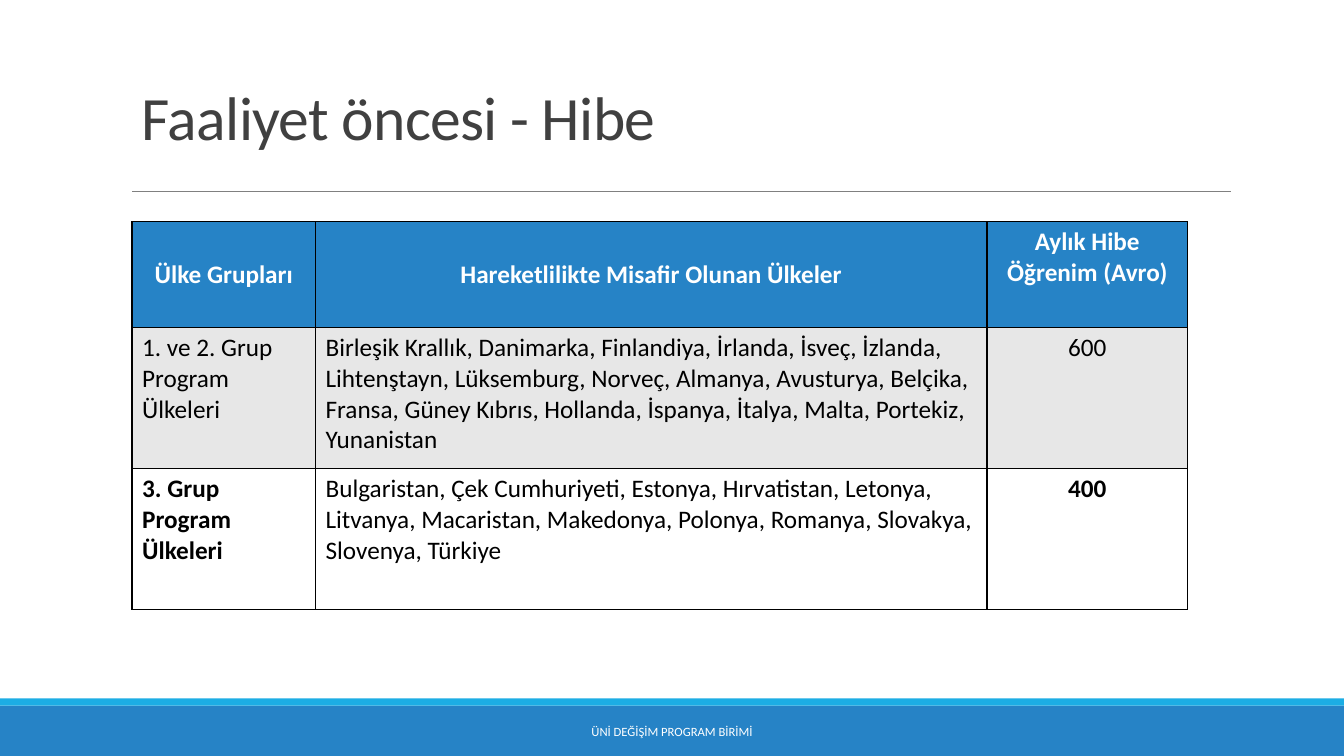
from lxml.etree import SubElement
from pptx import Presentation
from pptx.dml.color import RGBColor
from pptx.enum.shapes import MSO_CONNECTOR, MSO_SHAPE
from pptx.enum.text import MSO_ANCHOR, PP_ALIGN
from pptx.oxml.ns import qn
from pptx.util import Inches, Pt

TITLE = "Faaliyet öncesi - Hibe"
FOOTER = "ÜNİ DEĞİŞİM PROGRAM BİRİMİ"
HEADERS = ["Ülke Grupları", "Hareketlilikte Misafir Olunan Ülkeler", "Aylık Hibe Öğrenim (Avro)"]
GRANTS = [
    ["1. ve 2. Grup Program Ülkeleri",
     "Birleşik Krallık, Danimarka, Finlandiya, İrlanda, İsveç, İzlanda, Lihtenştayn, "
     "Lüksemburg, Norveç, Almanya, Avusturya, Belçika, Fransa, Güney Kıbrıs, Hollanda, "
     "İspanya, İtalya, Malta, Portekiz, Yunanistan",
     "600"],
    ["3. Grup Program Ülkeleri",
     "Bulgaristan, Çek Cumhuriyeti, Estonya, Hırvatistan, Letonya, Litvanya, Macaristan, "
     "Makedonya, Polonya, Romanya, Slovakya, Slovenya, Türkiye",
     "400"],
]
THEME = {
    "font": "Calibri",
    "blue": "2683C6", "cyan": "1CADE4", "rule": "808080", "title": "404040",
    "black": "000000", "white": "FFFFFF", "band": "E7E7E7",
    "title_size": 44, "table_size": 18, "footer_size": 9,
}
SLIDE_WIDTH, SLIDE_HEIGHT = 13.33, 7.5
LEFT = 1.31
COLUMN_WIDTHS = [1.82, 6.66, 1.99]
ROW_HEIGHTS = [1.05, 1.4, 1.4]
BANDS = [(7, 0.5, "blue"), (6.93, 0.07, "cyan")]


def color(name):
    return RGBColor.from_string(THEME[name])


def write(frame, text, size, ink, bold=False, align=PP_ALIGN.LEFT):
    frame.word_wrap = True
    paragraph = frame.paragraphs[0]
    paragraph.alignment = align
    run = paragraph.add_run()
    run.text = text
    for name, value in {"name": THEME["font"], "size": Pt(THEME[size]), "bold": bold}.items():
        setattr(run.font, name, value)
    run.font.color.rgb = color(ink)
    return paragraph


def add_text(slide, box, anchor, *content, **style):
    frame = slide.shapes.add_textbox(*map(Inches, box)).text_frame
    frame.vertical_anchor = anchor
    return write(frame, *content, **style)


def add_borders(cell):
    """Draw 1 pt borders; they must come before the fill in the cell properties."""
    properties = cell._tc.get_or_add_tcPr()
    for side in ("a:lnL", "a:lnR", "a:lnT", "a:lnB"):
        border = SubElement(properties, qn(side), w=str(Pt(1)))
        fill = SubElement(border, qn("a:solidFill"))
        SubElement(fill, qn("a:srgbClr"), val=THEME["black"])


def add_frame(slide):
    """Add the footer bands and the rule under the title."""
    for top, height, fill in BANDS:
        band = slide.shapes.add_shape(
            MSO_SHAPE.RECTANGLE, 0, Inches(top), Inches(SLIDE_WIDTH), Inches(height))
        band.shadow.inherit = False
        band.fill.solid()
        band.fill.fore_color.rgb = color(fill)
        band.line.fill.background()
    rule = slide.shapes.add_connector(
        MSO_CONNECTOR.STRAIGHT, Inches(LEFT), Inches(1.9), Inches(12.21), Inches(1.9))
    rule.line.color.rgb = color("rule")
    rule.line.width = Pt(0.5)
    SubElement(rule._element.spPr, qn("a:effectLst"))


def add_grant_table(slide):
    rows = [HEADERS] + GRANTS
    table = slide.shapes.add_table(
        len(rows), len(HEADERS), Inches(LEFT), Inches(2.2),
        Inches(sum(COLUMN_WIDTHS)), Inches(sum(ROW_HEIGHTS))).table
    for column, width in zip(table.columns, COLUMN_WIDTHS):
        column.width = Inches(width)
    row_styles = [("blue", "white"), ("band", "black"), ("white", "black")]
    for r, (texts, height, (fill, ink)) in enumerate(zip(rows, ROW_HEIGHTS, row_styles)):
        table.rows[r].height = Inches(height)
        for c, text in enumerate(texts):
            cell = table.cell(r, c)
            add_borders(cell)
            cell.fill.solid()
            cell.fill.fore_color.rgb = color(fill)
            is_header, is_grant = r == 0, c == 2
            cell.vertical_anchor = (
                MSO_ANCHOR.MIDDLE if is_header and not is_grant else MSO_ANCHOR.TOP)
            write(cell.text_frame, text, "table_size", ink,
                  bold=is_header or (r == 2 and c != 1),
                  align=PP_ALIGN.CENTER if is_header or is_grant else PP_ALIGN.LEFT)


def main():
    presentation = Presentation()
    presentation.slide_width = Inches(SLIDE_WIDTH)
    presentation.slide_height = Inches(SLIDE_HEIGHT)
    slide = presentation.slides.add_slide(presentation.slide_layouts[6])
    add_frame(slide)
    title = add_text(slide, (LEFT, 0.55, 11.09, 1.02), MSO_ANCHOR.BOTTOM,
                     TITLE, "title_size", "title")
    title.line_spacing = 0.85
    title.runs[0].font._element.set("spc", "-50")
    add_grant_table(slide)
    add_text(slide, (4.03, 7.06, 5.27, 0.4), MSO_ANCHOR.MIDDLE,
             FOOTER, "footer_size", "white", align=PP_ALIGN.CENTER)
    presentation.save("out.pptx")


if __name__ == "__main__":
    main()
